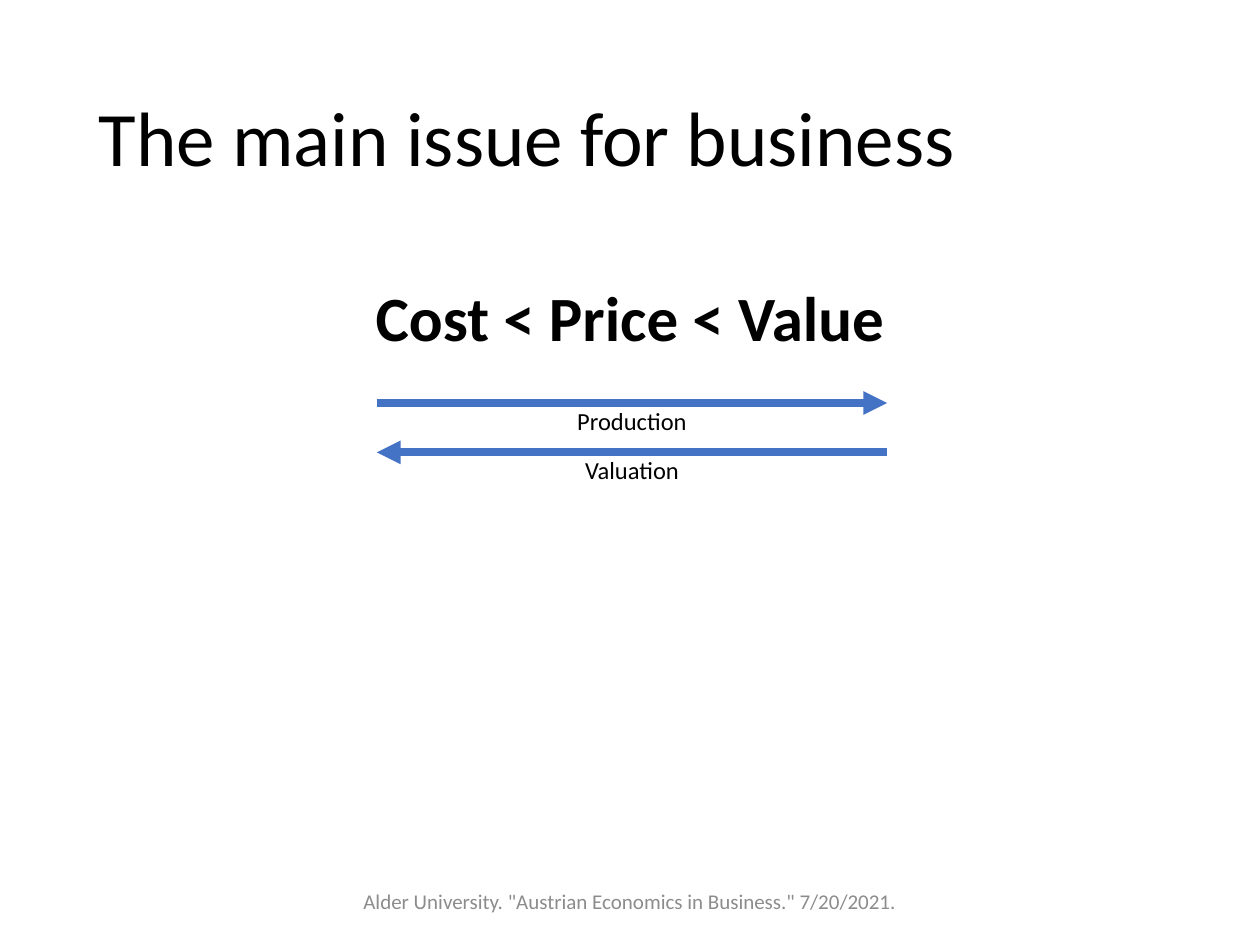
from lxml import etree
from pptx import Presentation
from pptx.dml.color import RGBColor
from pptx.enum import shapes, text
from pptx.oxml import ns
from pptx.util import Pt

BLACK = RGBColor(0x00, 0x00, 0x00)
GRAY = RGBColor(0x8C, 0x8C, 0x8C)
BLUE = RGBColor(0x44, 0x72, 0xC4)
FONT = "Calibri"
CENTER = text.PP_ALIGN.CENTER
MIDDLE = text.MSO_ANCHOR.MIDDLE
TOP = text.MSO_ANCHOR.TOP


def add_text(s, box, wording, size, color=BLACK, bold=False, align=CENTER,
             anchor=TOP, line_spacing=0.9, before=0):
    tf = s.shapes.add_textbox(*map(Pt, box)).text_frame
    tf.word_wrap = True
    tf.vertical_anchor = anchor
    p = tf.paragraphs[0]
    p.alignment = align
    p.line_spacing = line_spacing
    p.space_before = Pt(before)
    r = p.add_run()
    r.text = wording
    r.font.name = FONT
    r.font.size = Pt(size)
    r.font.bold = bold
    r.font.color.rgb = color


def add_title(s, box):
    add_text(s, box, "The main issue for business", 44,
             align=text.PP_ALIGN.LEFT, anchor=MIDDLE)


def add_footer(s, box):
    add_text(s, box, 'Alder University. "Austrian Economics in Business." 7/20/2021.',
             12, GRAY, anchor=MIDDLE, line_spacing=1.0)


def add_formula(s, box):
    add_text(s, box, "Cost < Price < Value", 36, bold=True, before=10)


def add_labelled_arrow(s, box, label, arrow_end):
    left, top, width, height = box
    line = s.shapes.add_connector(shapes.MSO_CONNECTOR.STRAIGHT,
                                  Pt(left), Pt(top), Pt(left + width), Pt(top))
    line.line.color.rgb = BLUE
    line.line.width = Pt(4.5)
    ln = line.line._get_or_add_ln()
    etree.SubElement(ln, ns.qn(arrow_end), type="triangle")
    etree.SubElement(line._element.spPr, ns.qn("a:effectLst"))
    add_text(s, box, label, 14, before=10)


def add_arrows(s, box):
    left, top, width, height = box
    step = 28.2
    arrows = [("Production", "a:tailEnd"), ("Valuation", "a:headEnd")]
    for i, (label, arrow_end) in enumerate(arrows):
        row = (left, top + i * step, width, height - step)
        add_labelled_arrow(s, row, label, arrow_end)


def main():
    prs = Presentation()
    prs.slide_width, prs.slide_height = Pt(720), Pt(540)
    s = prs.slides.add_slide(prs.slide_layouts[6])
    margin = 49.5
    width = 720 - 2 * margin
    add_title(s, (margin, 28.75, width, 104.4))
    add_footer(s, (margin, 500.5, width, 28.75))
    add_formula(s, (margin, 160.6, width, 57.6))
    add_arrows(s, (215.4, 230.3, 291.5, 62))
    prs.save("out.pptx")


if __name__ == "__main__":
    main()
